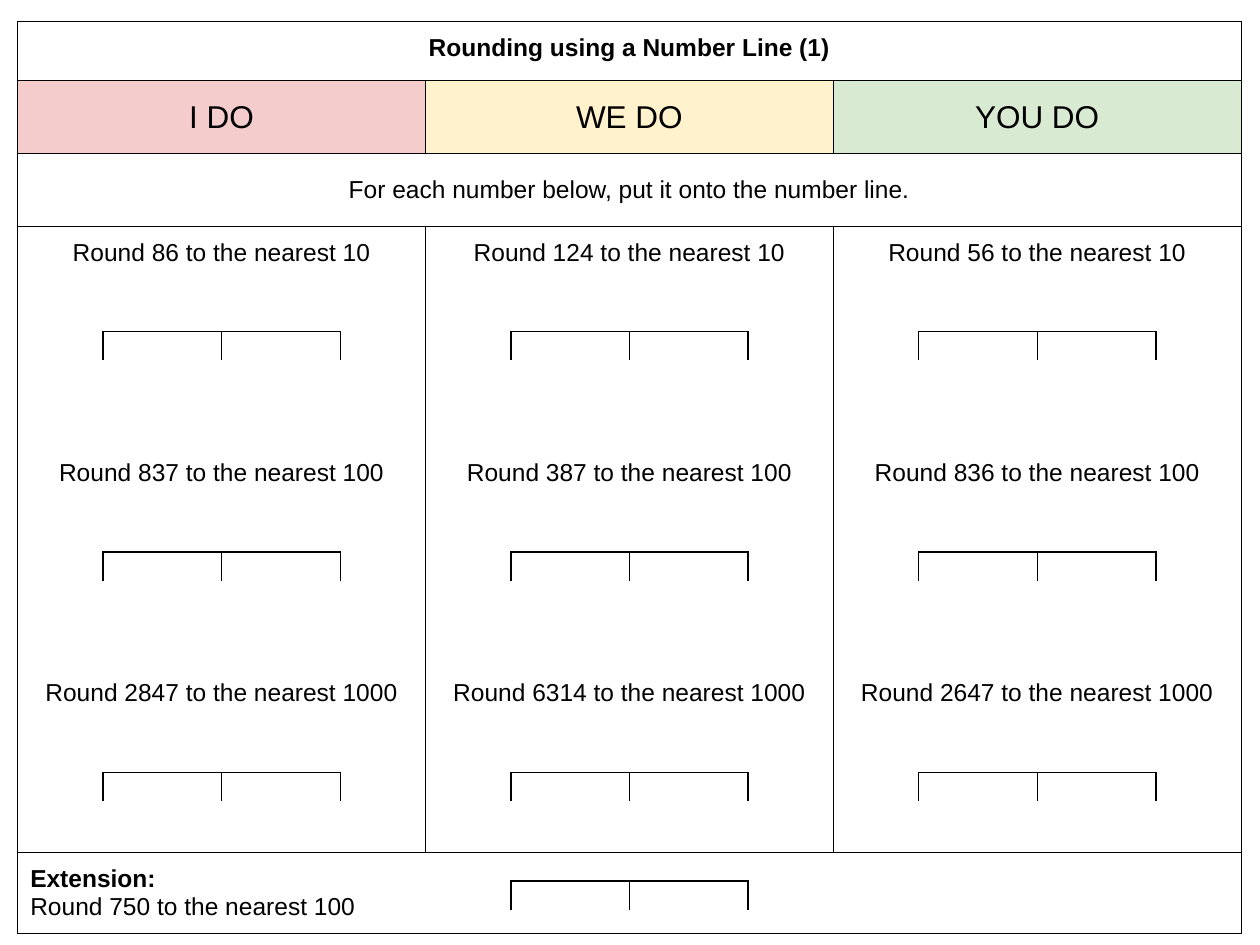
from dataclasses import dataclass

from lxml.etree import SubElement
from pptx import Presentation
from pptx.dml.color import RGBColor
from pptx.enum.text import MSO_ANCHOR as Anchor, PP_ALIGN as Align
from pptx.oxml.ns import qn
from pptx.util import Inches, Pt


@dataclass(frozen=True)
class Theme:
    font: str = "Arial"
    ink: str = "000000"
    header_fills: tuple = ("F4CCCC", "FFF2CC", "D9EAD3")
    body_size: int = 14
    header_size: int = 18
    empty_size: int = 6
    grid_line: float = 0.75
    number_line: float = 1


THEME = Theme()
TITLE = "Rounding using a Number Line (1)"
INSTRUCTION = "For each number below, put it onto the number line."
EXTENSION = ("Extension:", "Round 750 to the nearest 100")
HEADERS = ("I DO", "WE DO", "YOU DO")
NUMBERS = ((86, 837, 2847), (124, 387, 6314), (56, 836, 2647))
UNITS = (10, 100, 1000)

SHEET_BOX = (0.14, 0.17, 9.71, 7.27)
SHEET_ROWS = (0.47, 0.58, 0.58, 4.97, 0.64)
COLUMN_WIDTH = SHEET_BOX[2] / len(HEADERS)
LINE_SIZE = (3.14, 0.5)
LINE_INDENT = 0.05
FIRST_LINE_TOP = 2.63
QUESTION_PITCH = 1.75
QUESTION_GAP = 110  # points between one question and the next
EXTENSION_LINE_TOP = 6.99


def set_borders(cell, edges, width):
    """Draw the edges named in a string of L, R, T and B; hide the others."""
    properties = cell._tc.get_or_add_tcPr()
    for edge in "LRTB":
        border = SubElement(properties, qn(f"a:ln{edge}"), w=str(Pt(width)))
        if edge in edges:
            fill = SubElement(border, qn("a:solidFill"))
            SubElement(fill, qn("a:srgbClr"), val=THEME.ink)
        else:
            SubElement(border, qn("a:noFill"))


def add_plain_table(page, box, widths, heights):
    frame = page.shapes.add_table(len(heights), len(widths), *map(Inches, box))
    table = frame.table
    table.first_row = table.horz_banding = False
    for column, width in zip(table.columns, widths):
        column.width = Inches(width)
    for row, height in zip(table.rows, heights):
        row.height = Inches(height)
    return table


def set_margins(cell, margin):
    cell.margin_left = cell.margin_right = Inches(margin)
    cell.margin_top = cell.margin_bottom = Inches(margin)


def write_cell(cell, lines, size=THEME.body_size, align=Align.CENTER,
               anchor=Anchor.TOP, gap=0, bold_first=False):
    cell.text_frame.text = "\n".join(lines)
    cell.vertical_anchor = anchor
    for index, para in enumerate(cell.text_frame.paragraphs):
        para.alignment = align
        para.space_before = Pt(gap if index else 0)
        for span in para.runs:
            span.font.name = THEME.font
            span.font.size = Pt(size)
            span.font.bold = bold_first and index == 0
            span.font.color.rgb = RGBColor.from_string(THEME.ink)


def add_sheet(page, box):
    table = add_plain_table(page, box, [COLUMN_WIDTH] * len(HEADERS), SHEET_ROWS)
    for cell in table.iter_cells():
        set_margins(cell, 0.1)
        set_borders(cell, "LRTB", THEME.grid_line)
        cell.fill.background()
    for row in (0, 2, 4):
        table.cell(row, 0).merge(table.cell(row, len(HEADERS) - 1))

    write_cell(table.cell(0, 0), [TITLE], bold_first=True)
    write_cell(table.cell(2, 0), [INSTRUCTION], anchor=Anchor.MIDDLE)
    write_cell(table.cell(4, 0), EXTENSION, align=Align.LEFT, bold_first=True)
    for column, header in enumerate(HEADERS):
        cell = table.cell(1, column)
        write_cell(cell, [header], THEME.header_size, anchor=Anchor.MIDDLE)
        cell.fill.solid()
        cell.fill.fore_color.rgb = RGBColor.from_string(THEME.header_fills[column])
        questions = [f"Round {number} to the nearest {unit}"
                     for number, unit in zip(NUMBERS[column], UNITS)]
        write_cell(table.cell(3, column), questions, gap=QUESTION_GAP)


def add_number_line(page, box):
    """A line with three ticks, above a row of cells for its labels."""
    width, height = box[2:]
    sixth = width / 5
    widths = (sixth, sixth, sixth / 2, sixth / 2, sixth, sixth)
    table = add_plain_table(page, box, widths, (height * 0.46, height * 0.54))
    line_edges = ("R", "LTR", "TR", "LTR", "TR", "L")
    for index, cell in enumerate(table.iter_cells()):
        set_margins(cell, 0)
        edges = line_edges[index] if index < len(line_edges) else ""
        set_borders(cell, edges, THEME.number_line)
        cell.fill.background()
        end = cell.text_frame.paragraphs[0]._p.get_or_add_endParaRPr()
        end.set("sz", str(THEME.empty_size * 100))
    for row, starts in enumerate(((1, 3), (0, 2, 4))):
        for start in starts:
            table.cell(row, start).merge(table.cell(row, start + 1))


def build_page(page):
    add_sheet(page, SHEET_BOX)
    lefts = [SHEET_BOX[0] + LINE_INDENT + COLUMN_WIDTH * column
             for column in range(len(HEADERS))]
    for left in lefts:
        for question in range(len(UNITS)):
            top = FIRST_LINE_TOP + QUESTION_PITCH * question
            add_number_line(page, (left, top, *LINE_SIZE))
    add_number_line(page, (lefts[1], EXTENSION_LINE_TOP, *LINE_SIZE))


def main():
    deck = Presentation()
    deck.slide_width, deck.slide_height = Inches(10), Inches(7.5)
    build_page(deck.slides.add_slide(deck.slide_layouts[6]))
    deck.save("out.pptx")


if __name__ == "__main__":
    main()
